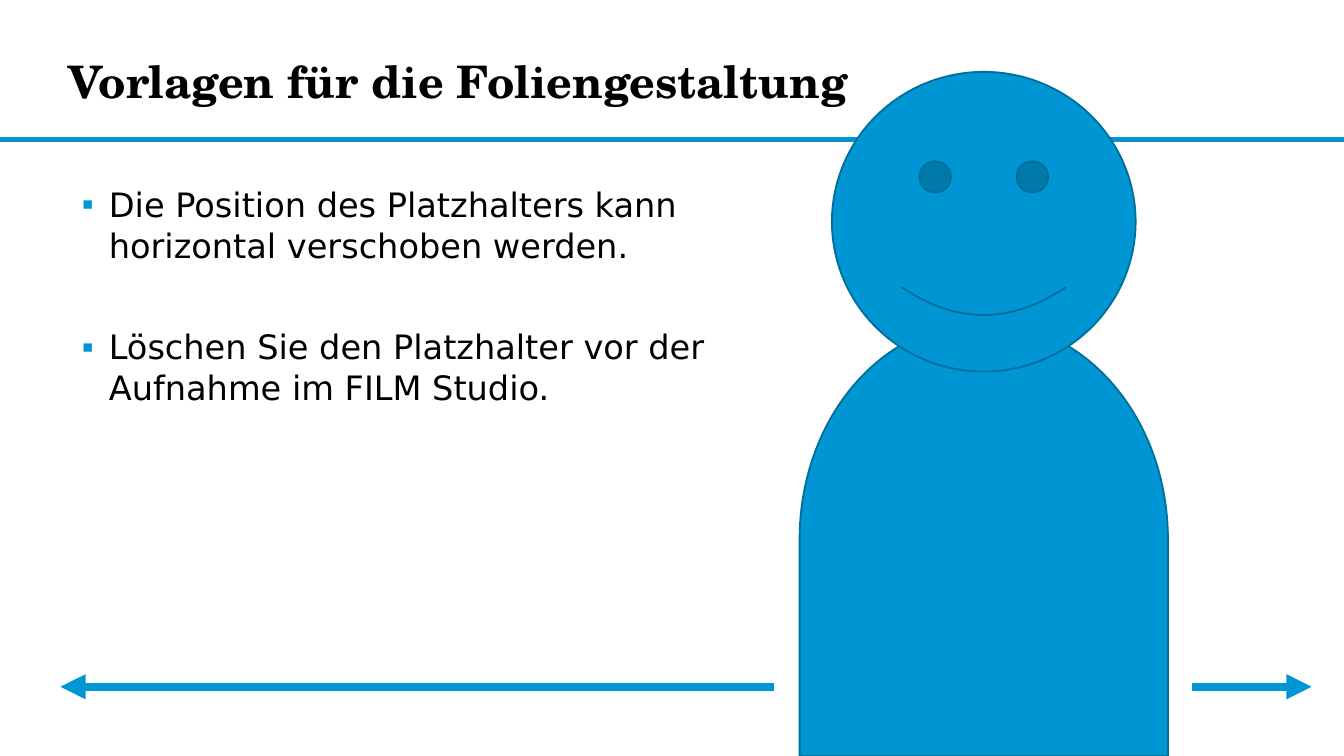
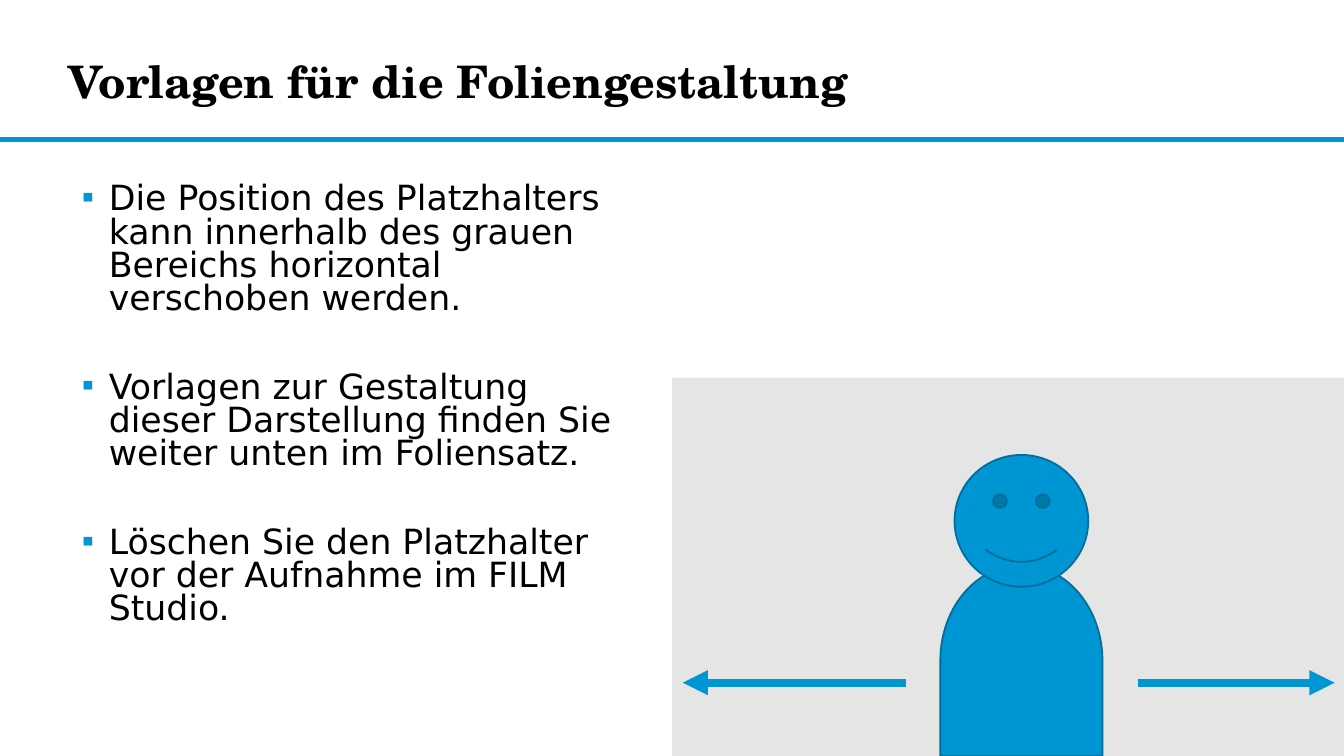
from lxml.etree import SubElement
from pptx import Presentation
from pptx.dml.color import RGBColor
from pptx.enum.shapes import MSO_CONNECTOR, MSO_SHAPE
from pptx.enum.text import MSO_ANCHOR, MSO_AUTO_SIZE, PP_ALIGN
from pptx.oxml.ns import qn
from pptx.util import Inches, Pt

BLUE = RGBColor(0x00, 0x96, 0xD3)
OUTLINE_BLUE = RGBColor(0x00, 0x6F, 0x9C)
RULE_FILL = RGBColor(0x0C, 0x94, 0xB7)
BLACK = RGBColor(0x00, 0x00, 0x00)
TITLE_FONT = "TeX Gyre Schola"
BODY_FONT = "DejaVu Sans"
SLIDE_WIDTH, SLIDE_HEIGHT = 10, 5.625
MARGIN = 0.51
TITLE = "Vorlagen für die Foliengestaltung"

# Widths in inches, spacing in points, arrows as (from x, to x)
PAGES = [
    {
        "bullets": [
            "Die Position des Platzhalters kann horizontal verschoben werden.",
            "Löschen Sie den Platzhalter vor der Aufnahme im FILM Studio.",
        ],
        "body_width": 5.26, "size": 18, "line_spacing": 1.0, "gap": 33,
        "grey_area": False, "figure_center": 7.32, "figure_scale": 1,
        "arrows": [(5.76, 0.45), (8.87, 9.76)], "arrow_y": 5.11,
    },
    {
        "bullets": [
            "Die Position des Platzhalters kann innerhalb des grauen Bereichs "
            "horizontal verschoben werden.",
            "Vorlagen zur Gestaltung dieser Darstellung finden Sie weiter unten "
            "im Foliensatz.",
            "Löschen Sie den Platzhalter vor der Aufnahme im FILM Studio.",
        ],
        "body_width": 4.33, "size": 18.6, "line_spacing": 0.8, "gap": 29.5,
        "grey_area": True, "figure_center": 7.6, "figure_scale": 0.44,
        "arrows": [(6.74, 5.08), (8.47, 9.93)], "arrow_y": 5.08,
    },
]


def add_filled_shape(shapes, kind, left, top, width, height, fill, line=None):
    shape = shapes.add_shape(kind, Inches(left), Inches(top), Inches(width), Inches(height))
    shape.shadow.inherit = False
    shape.fill.solid()
    shape.fill.fore_color.rgb = fill
    if line is None:
        shape.line.fill.background()
    else:
        shape.line.color.rgb = line
        shape.line.width = Pt(1)
    return shape


def add_bullet(para):
    properties = para._p.get_or_add_pPr()
    properties.set("marL", str(Inches(0.2)))
    properties.set("indent", str(-Inches(0.2)))
    color = SubElement(properties, qn("a:buClr"))
    SubElement(color, qn("a:srgbClr"), val=str(BLUE))
    SubElement(properties, qn("a:buChar"), char="▪")


deck = Presentation()
deck.slide_width = Inches(SLIDE_WIDTH)
deck.slide_height = Inches(SLIDE_HEIGHT)

for page in PAGES:
    slide = deck.slides.add_slide(deck.slide_layouts[1])

    # Title and rule below it
    title = slide.shapes.title
    title.left, title.top = Inches(MARGIN), Inches(0.18)
    title.width, title.height = Inches(6.69), Inches(0.84)
    frame = title.text_frame
    frame.auto_size = MSO_AUTO_SIZE.NONE
    frame.vertical_anchor = MSO_ANCHOR.MIDDLE
    frame.margin_left = frame.margin_right = frame.margin_top = frame.margin_bottom = 0
    para = frame.paragraphs[0]
    para.alignment = PP_ALIGN.LEFT
    span = para.add_run()
    span.text = TITLE
    span.font.name = TITLE_FONT
    span.font.size = Pt(24)
    span.font.bold = True
    span.font.color.rgb = BLACK
    add_filled_shape(slide.shapes, MSO_SHAPE.RECTANGLE, 0, 1.03, SLIDE_WIDTH, 0.02,
                     RULE_FILL, BLUE)

    # Bulleted list
    body = slide.placeholders[1]
    body.left, body.top = Inches(MARGIN), Inches(1.32)
    body.width, body.height = Inches(page["body_width"]), Inches(3.8)
    frame = body.text_frame
    frame.auto_size = MSO_AUTO_SIZE.NONE
    frame.vertical_anchor = MSO_ANCHOR.TOP
    for number, text in enumerate(page["bullets"]):
        para = frame.add_paragraph() if number else frame.paragraphs[0]
        add_bullet(para)
        para.line_spacing = page["line_spacing"]
        para.space_before = Pt(0)
        para.space_after = Pt(page["gap"])
        span = para.add_run()
        span.text = text
        span.font.name = BODY_FONT
        span.font.size = Pt(page["size"])
        span.font.color.rgb = BLACK

    # Area in which the figure may move
    if page["grey_area"]:
        area = add_filled_shape(slide.shapes, MSO_SHAPE.RECTANGLE, SLIDE_WIDTH / 2,
                                SLIDE_HEIGHT / 2, SLIDE_WIDTH / 2, SLIDE_HEIGHT / 2, BLACK)
        color = area._element.spPr.find(qn("a:solidFill")).find(qn("a:srgbClr"))
        SubElement(color, qn("a:alpha"), val="10000")

    # Figure standing on the bottom edge: torso turned upright, then head
    center, scale = page["figure_center"], page["figure_scale"]
    torso_height, torso_width = 3.23 * scale, 2.74 * scale
    head_width, head_height = 2.26 * scale, 2.23 * scale
    figure = slide.shapes.add_group_shape()
    torso = add_filled_shape(figure.shapes, MSO_SHAPE.FLOWCHART_DELAY,
                             center - torso_height / 2,
                             SLIDE_HEIGHT - (torso_height + torso_width) / 2,
                             torso_height, torso_width, BLUE, OUTLINE_BLUE)
    torso.rotation = 270
    add_filled_shape(figure.shapes, MSO_SHAPE.SMILEY_FACE, center - head_width / 2,
                     SLIDE_HEIGHT - 5.09 * scale, head_width, head_height,
                     BLUE, OUTLINE_BLUE)

    # Arrows pointing to both sides
    y = Inches(page["arrow_y"])
    for start, end in page["arrows"]:
        arrow = slide.shapes.add_connector(MSO_CONNECTOR.STRAIGHT, Inches(start), y,
                                           Inches(end), y)
        arrow.line.color.rgb = BLUE
        arrow.line.width = Pt(4.5)
        SubElement(arrow.line._get_or_add_ln(), qn("a:tailEnd"), type="triangle")
        SubElement(arrow._element.spPr, qn("a:effectLst"))

deck.save("out.pptx")
